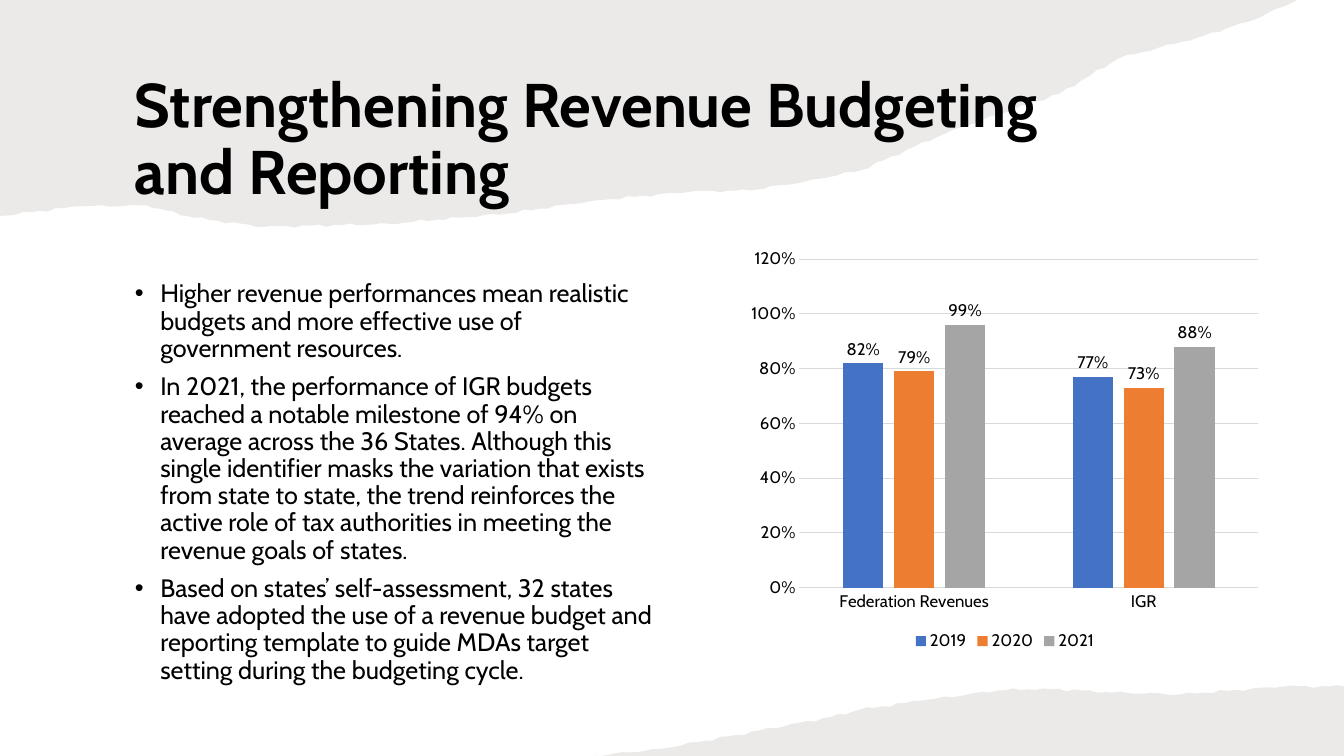
from itertools import pairwise
from math import ceil, sin

from lxml.etree import SubElement
from pptx import Presentation
from pptx.chart.data import CategoryChartData
from pptx.dml.color import RGBColor
from pptx.enum.chart import XL_CHART_TYPE, XL_LABEL_POSITION, XL_LEGEND_POSITION, XL_TICK_MARK
from pptx.enum.text import MSO_ANCHOR
from pptx.oxml.ns import qn
from pptx.util import Cm, Pt

FONT = "Cabin"
BLACK = "000000"
GRID = "D9D9D9"
PAPER = "82766A"

# Bends of each tear from left to right, in cm from the top left of its paper
TOP_BENDS = [
    (0, 5.44), (2, 5.2), (3.7, 5.18), (4.9, 5.49), (6.65, 5.72), (9.8, 5.64), (12.8, 5.38),
    (15, 5.05), (17.4, 4.83), (18.9, 4.8), (20.3, 4.57), (21.7, 4.29), (24, 3.28),
    (26.7, 2.36), (28.2, 1.47), (30.2, 0.94), (31.6, 0.5), (32.69, 0),
]
BOTTOM_BENDS = [
    (0, 1.8), (1.65, 1.63), (3.6, 1.27), (6, 0.82), (6.7, 0.64), (8.25, 0.41), (10.2, 0.15),
    (11.35, 0.1), (13.1, 0.2), (14.8, 0.25), (17.4, 0.05), (18.92, 0.05),
]
FIBRE_STEP = 0.2    # cm between the points of a rough edge
FIBRE_DEPTH = 0.02  # cm of each of its two waves

BULLETS = [
    "Higher revenue performances mean realistic budgets and more effective use of "
    "government resources.",
    "In 2021, the performance of IGR budgets reached a notable milestone of 94% on average "
    "across the 36 States. Although this single identifier masks the variation that exists "
    "from state to state, the trend reinforces the active role of tax authorities in meeting "
    "the revenue goals of states.",
    "Based on states’ self-assessment, 32 states have adopted the use of a revenue budget and "
    "reporting template to guide MDAs target setting during the budgeting cycle.",
]
# Year: values, colour
REVENUE = {
    "2019": ((0.82, 0.77), "4472C4"),
    "2020": ((0.79, 0.73), "ED7D31"),
    "2021": ((0.96, 0.88), "A5A5A5"),
}


def color(hex_text):
    return RGBColor.from_string(hex_text)


def set_attributes(target, values):
    for name, value in values.items():
        setattr(target, name, value)


def format_font(font, size, bold=False):
    set_attributes(font, {"name": FONT, "size": Pt(size), "bold": bold})
    font.color.rgb = color(BLACK)


def roughen(bends):
    """Join the bends by short steps that waver up and down like torn fibres."""
    points = [bends[0]]
    for (start_x, start_y), (end_x, end_y) in pairwise(bends):
        steps = ceil((end_x - start_x) / FIBRE_STEP)
        for step in range(1, steps):
            x = start_x + (end_x - start_x) * step / steps
            y = start_y + (end_y - start_y) * step / steps
            points.append((x, y + FIBRE_DEPTH * (sin(7 * x) + sin(17 * x))))
        points.append((end_x, end_y))
    return points


def add_torn_paper(slide, left, top, bends, corner):
    outline = [(Cm(x), Cm(y)) for x, y in [corner, *roughen(bends)]]
    builder = slide.shapes.build_freeform(*outline[0])
    builder.add_line_segments(outline[1:], close=True)
    shape = builder.convert_to_shape(left, top)
    shape.shadow.inherit = False
    shape.line.fill.background()
    shape.fill.solid()
    shape.fill.fore_color.rgb = color(PAPER)
    # Mostly transparent fill
    paint = shape.fill._xPr.find(qn("a:solidFill"))[0]
    SubElement(paint, qn("a:alpha"), val="15000")


def add_paragraphs(slide, box, texts, size, bold=False, anchor=MSO_ANCHOR.TOP):
    frame = slide.shapes.add_textbox(*box).text_frame
    set_attributes(frame, {"word_wrap": True, "vertical_anchor": anchor})
    frame.text = "\n".join(texts)
    for paragraph in frame.paragraphs:
        paragraph.line_spacing = 0.9
        format_font(paragraph.runs[0].font, size, bold)
    return frame.paragraphs


def add_title(slide, box):
    add_paragraphs(slide, box, ["Strengthening Revenue Budgeting and Reporting"],
                   44, True, MSO_ANCHOR.MIDDLE)


def add_bullets(slide, box):
    for paragraph in add_paragraphs(slide, box, BULLETS, 18):
        paragraph.space_after = Pt(8)
        properties = paragraph._p.get_or_add_pPr()
        properties.set("marL", str(Cm(0.79)))
        properties.set("indent", str(-Cm(0.64)))
        SubElement(properties, qn("a:buFont"), typeface="Arial")
        SubElement(properties, qn("a:buChar"), char="•")


def format_line(line):
    line.color.rgb = color(GRID)
    line.width = Pt(0.75)


def format_axes(chart):
    for axis in (chart.category_axis, chart.value_axis):
        set_attributes(axis, {"major_tick_mark": XL_TICK_MARK.NONE,
                              "minor_tick_mark": XL_TICK_MARK.NONE})
        format_font(axis.tick_labels.font, 12)
    format_line(chart.category_axis.format.line)
    value_axis = chart.value_axis
    set_attributes(value_axis, {"minimum_scale": 0, "maximum_scale": 1.2, "major_unit": 0.2})
    set_attributes(value_axis.tick_labels, {"number_format": "0%",
                                            "number_format_is_linked": False})
    value_axis.format.line.fill.background()
    format_line(value_axis.major_gridlines.format.line)


def format_columns(plot):
    set_attributes(plot, {"gap_width": 219, "overlap": -27, "vary_by_categories": False})
    for series, (_, fill) in zip(plot.series, REVENUE.values()):
        series.invert_if_negative = False
        series.format.fill.solid()
        series.format.fill.fore_color.rgb = color(fill)
        labels = series.data_labels
        set_attributes(labels, {"show_value": True, "number_format": "0%",
                                "number_format_is_linked": False,
                                "position": XL_LABEL_POSITION.OUTSIDE_END})
        format_font(labels.font, 12)

    # The first 2021 column carries its own label text
    label = plot.series[2].points[0].data_label
    label.text_frame.text = "99%"
    format_font(label.text_frame.paragraphs[0].runs[0].font, 12)
    label.position = XL_LABEL_POSITION.OUTSIDE_END


def add_revenue_chart(slide, box):
    data = CategoryChartData(number_format="0%")
    data.categories = ["Federation Revenues", "IGR"]
    for year, (values, _) in REVENUE.items():
        data.add_series(year, values)
    chart = slide.shapes.add_chart(XL_CHART_TYPE.COLUMN_CLUSTERED, *box, data).chart
    set_attributes(chart, {"has_title": False, "has_legend": True})
    format_font(chart.font, 12)
    set_attributes(chart.legend, {"position": XL_LEGEND_POSITION.BOTTOM,
                                  "include_in_layout": False})
    format_axes(chart)
    format_columns(chart.plots[0])


def main():
    presentation = Presentation()
    set_attributes(presentation, {"slide_width": Cm(33.87), "slide_height": Cm(19.05)})
    slide = presentation.slides.add_slide(presentation.slide_layouts[6])
    add_torn_paper(slide, 0, 0, TOP_BENDS, corner=(0, 0))
    add_title(slide, (Cm(3.15), Cm(1.7), Cm(26.09), Cm(3.71)))
    add_bullets(slide, (Cm(3), Cm(6.96), Cm(13.77), Cm(10.87)))
    add_torn_paper(slide, Cm(14.95), Cm(17.25), BOTTOM_BENDS, corner=(18.92, 1.8))
    add_revenue_chart(slide, (Cm(18.67), Cm(6.07), Cm(13.31), Cm(10.44)))
    presentation.save("out.pptx")


if __name__ == "__main__":
    main()
